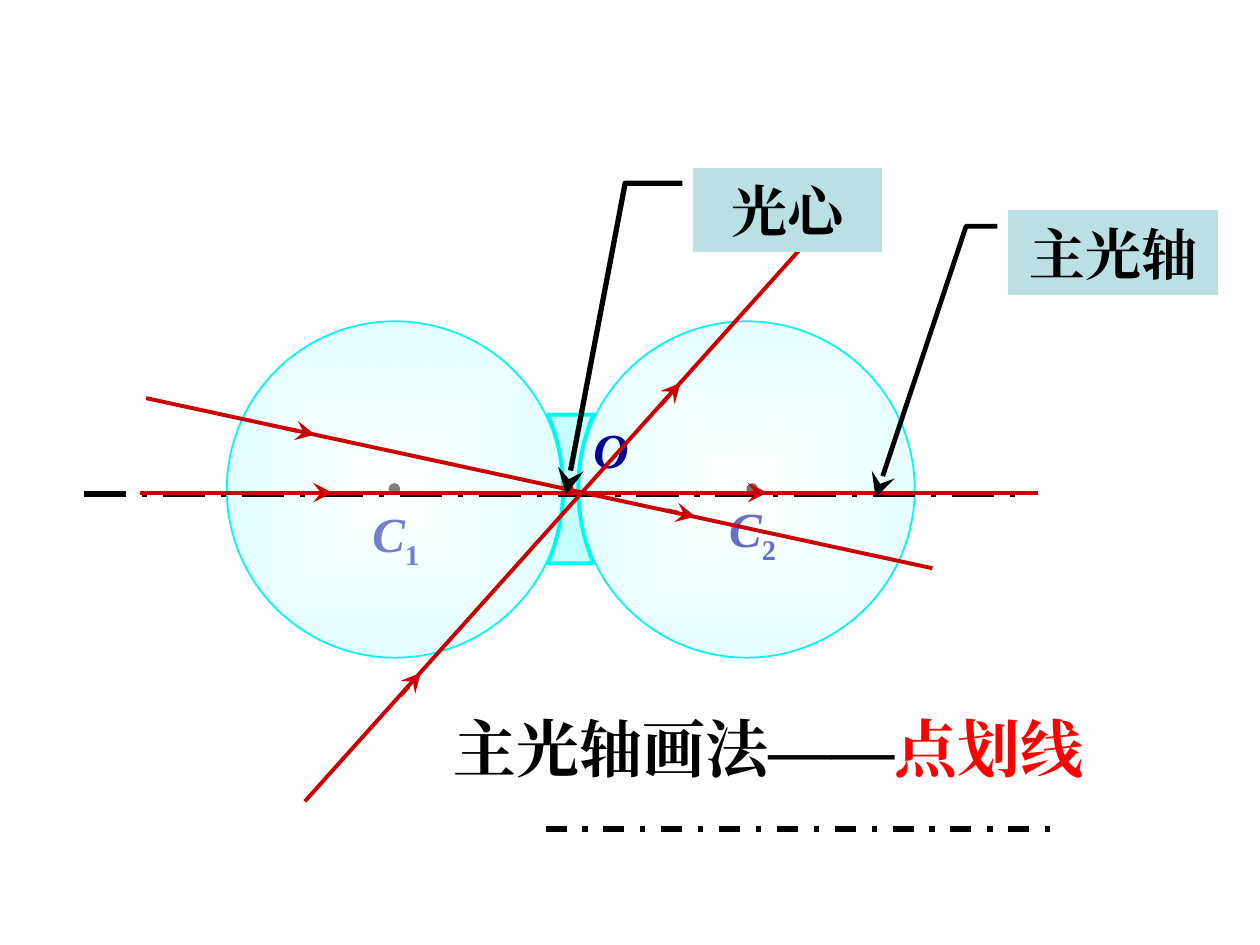
import pptx
import pptx.util
import pptx.dml.color
import pptx.enum.dml
import pptx.enum.shapes
import pptx.enum.text
import pptx.oxml
import pptx.oxml.ns
from lxml import etree

Inches = pptx.util.Inches
Pt = pptx.util.Pt
rgb = pptx.dml.color.RGBColor.from_string
qn = pptx.oxml.ns.qn
MSO_SHAPE = pptx.enum.shapes.MSO_SHAPE
MSO_LINE = pptx.enum.dml.MSO_LINE
STRAIGHT = pptx.enum.shapes.MSO_CONNECTOR.STRAIGHT


def stroke(sp, color, width, dash=None, arrow=False):
    sp.line.color.rgb = rgb(color)
    sp.line.width = Pt(width)
    if dash:
        sp.line.dash_style = dash
    spPr = sp._element.spPr
    if arrow:
        etree.SubElement(spPr.find(qn("a:ln")), qn("a:tailEnd"),
                         type="stealth", w="lg", len="lg")
    etree.SubElement(spPr, qn("a:effectLst"))


def style(r, size, color, italic=False):
    r.font.size = Pt(size)
    r.font.bold = True
    r.font.italic = italic
    r.font.name = "Times New Roman"
    r.font.color.rgb = rgb(color)
    etree.SubElement(r.font._element, qn("a:ea"), typeface="Times New Roman")


prs = pptx.Presentation()
prs.slide_width, prs.slide_height = Inches(10), Inches(7.5)
s = prs.slides.add_slide(prs.slide_layouts[6])

for number, dot_x, text_x, text_y in [("2", 5.93, 5.69, 3.96), ("1", 3.09, 2.86, 4)]:
    g = s.shapes.add_group_shape()
    sp = g.shapes.add_shape(MSO_SHAPE.OVAL, Inches(dot_x), Inches(3.84), Inches(0.08), Inches(0.08))
    stroke(sp, "000000", 0.75)
    sp.fill.solid()
    sp.fill.fore_color.rgb = rgb("000000")
    tb = g.shapes.add_textbox(Inches(text_x), Inches(text_y), Inches(0.7), Inches(0.47))
    tf = tb.text_frame
    tf.word_wrap = True
    tf.margin_left = tf.margin_right = tf.margin_top = tf.margin_bottom = 0
    p = tf.paragraphs[0]
    for text, italic in [(" C", True), (number, False)]:
        r = p.add_run()
        r.text = text
        style(r, 28, "000099", italic)
    r.font._element.set("baseline", "-25000")

lens = s.shapes.add_group_shape()
for x, alpha in [(1.8, 49000), (4.59, 43500)]:
    sp = lens.shapes.add_shape(MSO_SHAPE.OVAL, Inches(x), Inches(2.55), Inches(2.67), Inches(2.67))
    stroke(sp, "00F8F2", 1)
    grad = pptx.oxml.parse_xml(
        '<a:gradFill xmlns:a="http://schemas.openxmlformats.org/drawingml/2006/main" rotWithShape="1"><a:gsLst>'
        + "".join(f'<a:gs pos="{pos}"><a:srgbClr val="{color}"><a:alpha val="{alpha}"/></a:srgbClr></a:gs>'
                  for pos, color in [(0, "FFFFFF"), (100000, "C5FFFF")])
        + '</a:gsLst><a:path path="shape"><a:fillToRect l="50000" t="50000" r="50000" b="50000"/></a:path></a:gradFill>')
    sp._element.spPr.find(qn("a:ln")).addprevious(grad)

steps = [i / 8 for i in range(-8, 9)]
right = [(Inches(4.59 + 0.12 * t * t), Inches(3.88 + 0.59 * t)) for t in steps]
left = [(Inches(4.47 - 0.12 * t * t), Inches(3.88 + 0.59 * t)) for t in reversed(steps)]
fb = lens.shapes.build_freeform(*right[0])
fb.add_line_segments(right[1:] + left, close=True)
sp = fb.convert_to_shape()
stroke(sp, "00F8F2", 2.25)
sp.fill.solid()
sp.fill.fore_color.rgb = rgb("C5FFFF")

for x1, x2, y, dash in [(0.67, 8.11, 3.92, MSO_LINE.LONG_DASH_DOT),
                        (4.33, 8.33, 6.58, MSO_LINE.DASH_DOT)]:
    sp = s.shapes.add_connector(STRAIGHT, Inches(x1), Inches(y), Inches(x2), Inches(y))
    stroke(sp, "000000", 3, dash)

tb = s.shapes.add_textbox(Inches(4.71), Inches(3.33), Inches(0.28), Inches(0.47))
tf = tb.text_frame
tf.margin_left = tf.margin_right = tf.margin_top = tf.margin_bottom = 0
tf.text = "O"
style(tf.paragraphs[0].runs[0], 28, "000099", True)

sp = s.shapes.add_shape(MSO_SHAPE.OVAL, Inches(4.47), Inches(3.84), Inches(0.08), Inches(0.08))
sp.shadow.inherit = False
sp.fill.solid()
sp.fill.fore_color.rgb = rgb("CC0000")
sp.line.fill.background()

rays = [
    [(1.16, 3.16, 7.4, 4.51), (2.27, 3.4, 2.5, 3.45), (5.29, 4.05, 5.52, 4.1)],
    [(2.42, 6.36, 6.68, 1.61), (3.18, 5.52, 3.34, 5.34), (5.24, 3.22, 5.4, 3.04)],
    [(1.11, 3.91, 8.24, 3.91), (2.37, 3.91, 2.64, 3.91), (5.82, 3.91, 6.09, 3.91)],
]
for ray in rays:
    g = s.shapes.add_group_shape()
    for i, ends in enumerate(ray):
        sp = g.shapes.add_connector(STRAIGHT, *[Inches(v) for v in ends])
        stroke(sp, "CC0000", 2.25, arrow=i > 0)

tb = s.shapes.add_textbox(Inches(3.5), Inches(5.58), Inches(6.08), Inches(0.7))
tb.text_frame.word_wrap = True
p = tb.text_frame.paragraphs[0]
for text, color in [("主光轴画法——", "000000"), ("点划线", "FF0000")]:
    r = p.add_run()
    r.text = text
    style(r, 36, color)

callouts = [
    ("主光轴", 8, 1.67, 1.67, 2.75, (0.188, -0.05, 0.188, -0.199, 3.401, -0.629)),
    ("光心", 5.5, 1.33, 1.5, 3, (0.188, -0.056, 0.188, -0.359, 3.875, -0.672)),
]
for text, x, y, w, width, adjustments in callouts:
    sp = s.shapes.add_shape(MSO_SHAPE.LINE_CALLOUT_2_NO_BORDER,
                            Inches(x), Inches(y), Inches(w), Inches(0.67))
    for i, value in enumerate(adjustments):
        sp.adjustments[i] = value
    stroke(sp, "000000", width, arrow=True)
    sp.fill.solid()
    sp.fill.fore_color.rgb = rgb("BBE0E3")
    sp.text_frame.text = text
    p = sp.text_frame.paragraphs[0]
    p.alignment = pptx.enum.text.PP_ALIGN.CENTER
    style(p.runs[0], 32, "000000")

prs.save("out.pptx")
